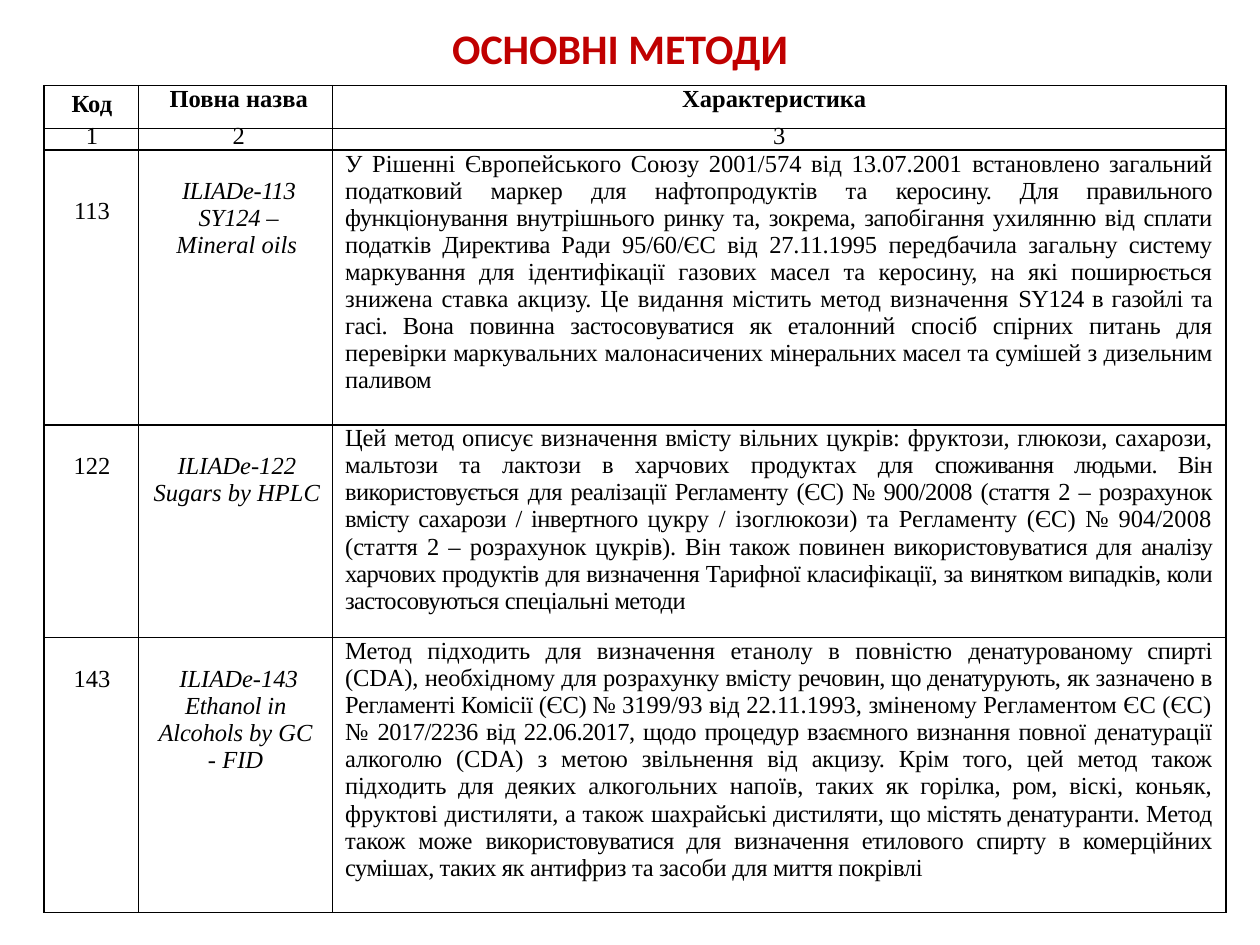
from dataclasses import dataclass

from lxml.etree import SubElement, Element
from pptx import Presentation
from pptx.dml.color import RGBColor as Rgb
from pptx.enum.text import MSO_ANCHOR as Anchor, MSO_AUTO_SIZE as Fit, PP_ALIGN as Align
from pptx.oxml.ns import qn
from pptx.util import Inches, Pt

HUES = {"title": "C00000", "ink": "000000"}
WIDE, HIGH = Inches(10), Inches(7.5)
COLS = (7.5, 15.4, 70.9)  # percent of slide width
ROWS = (4.53, 2.27, 29.07, 22.53, 29.07)  # percent of slide height
DROP = 0.22  # one text line, in inches


@dataclass
class Para:
    runs: list  # (text, letter spacing in points)
    left: float = 0
    right: float = 0
    align: Align = Align.CENTER
    bold: bool = False
    slant: bool = False
    line: float = 0


@dataclass
class Cell:
    paras: list
    top: float = 0


def across(share: float) -> int:
    return round(WIDE * share / 100)


def down(share: float) -> int:
    return round(HIGH * share / 100)


def write(para, text: str, *, size=14, face="Times New Roman", hue="ink",
          bold=False, slant=False, gap=0.0) -> None:
    run = para.add_run()
    run.text = text
    font = run.font
    font.size, font.name, font.bold, font.italic = Pt(size), face, bold, slant
    font.color.rgb = Rgb.from_string(HUES[hue])
    if gap:
        run._r.get_or_add_rPr().set("spc", str(round(gap * 100)))


def frame(cell) -> None:
    props = cell._tc.get_or_add_tcPr()
    for spot, side in enumerate(("lnL", "lnR", "lnT", "lnB")):
        edge = Element(qn(f"a:{side}"), w=str(Pt(1)))
        fill = SubElement(edge, qn("a:solidFill"))
        SubElement(fill, qn("a:srgbClr"), val=HUES["ink"])
        props.insert(spot, edge)


def draw(cell, data: Cell) -> None:
    cell.margin_left = cell.margin_right = cell.margin_bottom = 0
    cell.margin_top = Inches(data.top)
    cell.fill.background()
    frame(cell)
    body = cell.text_frame
    for i, item in enumerate(data.paras):
        para = body.paragraphs[0] if i == 0 else body.add_paragraph()
        para.alignment = item.align
        props = para._p.get_or_add_pPr()
        props.set("marL", str(Inches(item.left)))
        props.set("marR", str(Inches(item.right)))
        if item.line:
            para.line_spacing = Pt(item.line)
        for text, gap in item.runs:
            write(para, text, bold=item.bold, slant=item.slant, gap=gap)


def head(text: str, left: float, right: float, top=0.0, line=0.0) -> Cell:
    return Cell([Para([(text, 0)], left, right, bold=True, line=line)], top)


def mark(text: str, left=0.0) -> Cell:
    return Cell([Para([(text, 0)], left, line=12.4)])


def code(text: str, top=DROP) -> Cell:
    return Cell([Para([(text, 0)], 0.06, 0.05)], top)


def name(*lines: tuple) -> Cell:
    return Cell([Para(runs, left, right, slant=True) for runs, left, right in lines], DROP)


def note(*runs: tuple) -> Cell:
    return Cell([Para(runs, 0.1, 0.11, Align.JUSTIFY)])


GRID = [
    # Headings
    [head("Код", 0.01, 0, 0.13, 9.2), head("Повна назва", 0.13, 0.08),
     head("Характеристика", 1.55, 1.63)],
    # Column numbers
    [mark("1", 0.01), mark("2", 0.05), mark("3")],
    # Methods
    [code("113", DROP + 0.16),
     name(([("ILIADe-113 ", -0.2), ("SY124 –", -0.1)], 0.13, 0.08),
          ([("Mineral oils", 0)], 0.09, 0.07)),
     note(("У Рішенні Європейського Союзу 2001/574 від 13.07.2001 ", 0),
          ("встановлено загальний податковий маркер для нафтопродуктів та ", -0.1),
          ("керосину. Для правильного функціонування внутрішнього ", -0.3),
          ("ринку та, зокрема, запобігання ухилянню від сплати податків Директива Ради ", -0.2),
          ("95/60/ЄС від 27.11.1995 передбачила загальну систему маркування для "
           "ідентифікації газових масел та керосину, на які поширюється ", -0.1),
          ("знижена ставка акцизу. Це видання містить метод визначення ", 0),
          ("SY124 в газойлі та гасі. Вона ", -0.3),
          ("повинна застосовуватися як еталонний ", -0.2),
          ("спосіб спірних питань для перевірки маркувальних малонасичених ", -0.1),
          ("мінеральних масел ", -0.3),
          ("та сумішей з дизельним паливом", -0.2))],
    [code("122"),
     name(([("ILIADe-122", 0)], 0.1, 0.08), ([("Sugars by HPLC", 0)], 0.09, 0.07)),
     note(("Цей метод описує визначення вмісту вільних цукрів: фруктози, глюкози, "
           "сахарози, мальтози та лактози в харчових продуктах для ", -0.1),
          ("споживання людьми. Він використовується ", -0.4),
          ("для реалізації Регламенту (ЄС) № 900/2008 (стаття 2 – розрахунок "
           "вмісту сахарози / інвертного ", -0.3),
          ("цукру / ізоглюкози) та Регламенту (ЄС) № 904/2008 (стаття 2 – ", 0),
          ("розрахунок цукрів). Він також повинен використовуватися для ", -0.1),
          ("аналізу харчових продуктів ", -0.4),
          ("для визначення Тарифної класифікації, за ", -0.3),
          ("винятком випадків, коли застосовуються ", -0.4),
          ("спеціальні методи", -0.3))],
    [code("143"),
     name(([("ILIADe-143", 0)], 0.13, 0.08),
          ([("Ethanol in Alcohols ", -0.1), ("by GC - FID", 0)], 0.13, 0.13)),
     note(("Метод підходить для визначення етанолу в повністю ", 0),
          ("денатурованому спирті ", -0.2),
          ("(CDA), необхідному для розрахунку вмісту ", -0.1),
          ("речовин, що денатурують, ", -0.3),
          ("як зазначено в Регламенті Комісії (ЄС) № ", -0.2),
          ("3199/93 від 22.11.1993, зміненому Регламентом ЄС (ЄС) № ", 0),
          ("2017/2236 від 22.06.2017, щодо процедур взаємного ", -0.3),
          ("визнання повної ", -0.2),
          ("денатурації алкоголю (CDA) з метою звільнення від акцизу. Крім того, "
           "цей метод також підходить для деяких ", -0.1),
          ("алкогольних напоїв, ", 0),
          ("таких як горілка, ром, ", -0.1),
          ("віскі, коньяк, фруктові дистиляти, а також ", 0),
          ("шахрайські дистиляти, що містять денатуранти. ", -0.2),
          ("Метод також може ", -0.1),
          ("використовуватися для ", -0.3),
          ("визначення етилового спирту в комерційних ", -0.2),
          ("сумішах, таких як ", -0.3),
          ("антифриз та засоби для миття покрівлі", -0.2))],
]


def main() -> None:
    deck = Presentation()
    deck.slide_width, deck.slide_height = WIDE, HIGH
    slide = deck.slides.add_slide(deck.slide_layouts[5])

    # Title
    title = slide.shapes.title
    title.left, title.top = across(5.1), down(1.73)
    title.width, title.height = across(89), down(6.67)
    body = title.text_frame
    body.auto_size, body.vertical_anchor = Fit.NONE, Anchor.TOP
    body.word_wrap = True
    para = body.paragraphs[0]
    para.alignment = Align.CENTER
    write(para, "ОСНОВНІ МЕТОДИ ", size=24, face="Calibri", hue="title", bold=True)

    # Table of methods
    table = slide.shapes.add_table(len(ROWS), len(COLS), across(3.5), down(9.07),
                                   across(sum(COLS)), down(sum(ROWS))).table
    table.first_row = table.horz_banding = False
    for col, share in zip(table.columns, COLS):
        col.width = across(share)
    for row, share, cells in zip(table.rows, ROWS, GRID):
        row.height = down(share)
        for cell, data in zip(row.cells, cells):
            draw(cell, data)

    deck.save("out.pptx")


if __name__ == "__main__":
    main()
